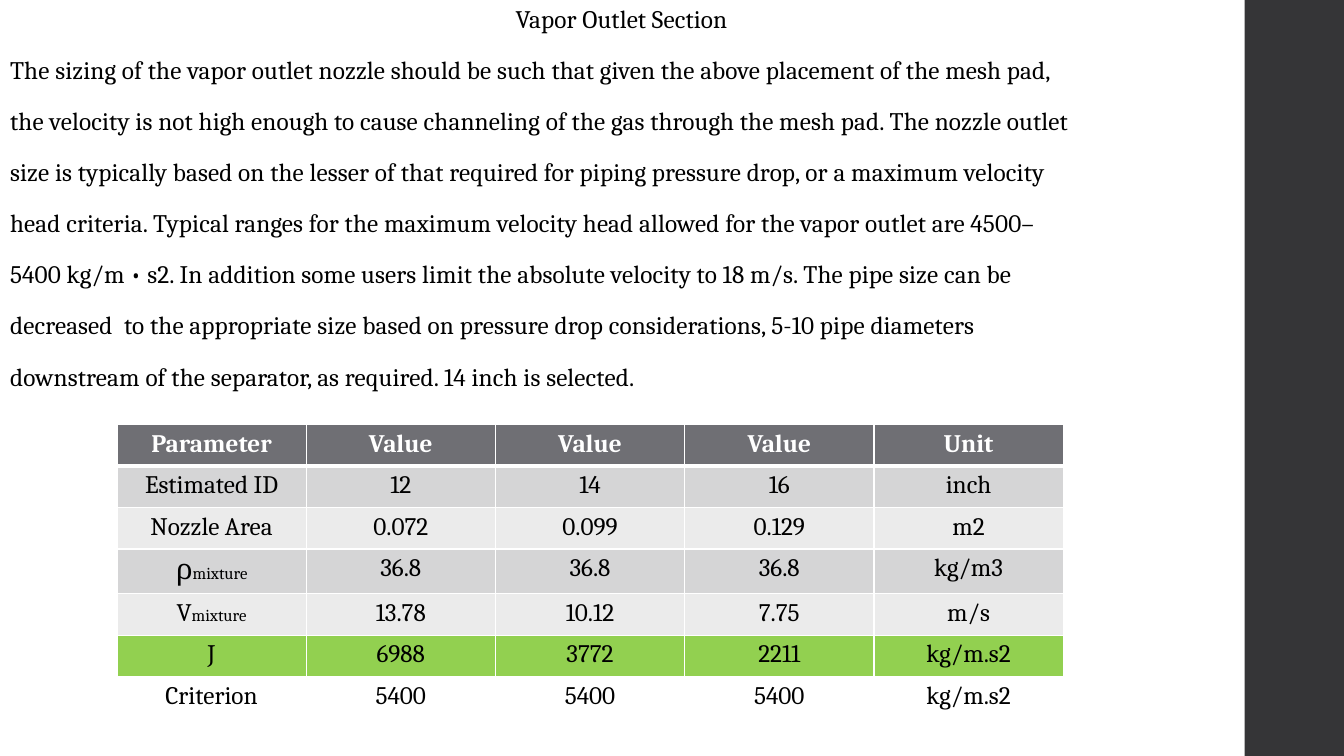
import pptx
import pptx.util
import pptx.dml.color
import pptx.enum.shapes
import pptx.enum.text
import pptx.oxml
import pptx.oxml.ns
import lxml.etree

Pt = pptx.util.Pt
ALIGN = pptx.enum.text.PP_ALIGN
COLORS = {
    "text": "000000", "white": "FFFFFF", "side": "353537", "header": "6F6F74",
    "dark": "D5D5D6", "light": "EBEBEB", "selected": "92D050",
}


def rgb(name):
    return pptx.dml.color.RGBColor.from_string(COLORS[name])


def format_run(run, size, color="text", bold=False):
    run.font.name = "Cambria"
    run.font.size = Pt(size)
    run.font.bold = bold
    run.font.color.rgb = rgb(color)


deck = pptx.Presentation()
deck.slide_width = Pt(960)
deck.slide_height = Pt(540)
slide = deck.slides.add_slide(deck.slide_layouts[1])
title = slide.shapes.title
title.element.getparent().remove(title.element)

side_band = slide.shapes.add_shape(
    pptx.enum.shapes.MSO_SHAPE.RECTANGLE, Pt(889), Pt(0), Pt(71), Pt(540))
side_band.shadow.inherit = False
side_band.fill.solid()
side_band.fill.fore_color.rgb = rgb("side")
side_band.line.fill.background()

lines = [
    "Vapor Outlet Section",
    "The sizing of the vapor outlet nozzle should be such that given the above placement of the mesh pad,",
    "the velocity is not high enough to cause channeling of the gas through the mesh pad. The nozzle outlet",
    "size is typically based on the lesser of that required for piping pressure drop, or a maximum velocity",
    "head criteria. Typical ranges for the maximum velocity head allowed for the vapor outlet are 4500–",
    "5400 kg/m • s2. In addition some users limit the absolute velocity to 18 m/s. The pipe size can be",
    "decreased  to the appropriate size based on pressure drop considerations, 5-10 pipe diameters",
    "downstream of the separator, as required. 14 inch is selected.",
]
body = slide.placeholders[1]
body.left, body.top, body.width, body.height = Pt(0), Pt(0), Pt(888), Pt(540)
sizing_text = body.text_frame
sizing_text.auto_size = pptx.enum.text.MSO_AUTO_SIZE.NONE
sizing_text.vertical_anchor = pptx.enum.text.MSO_ANCHOR.TOP
sizing_text.text = "\n".join(lines)
for number, paragraph in enumerate(sizing_text.paragraphs):
    paragraph.alignment = ALIGN.LEFT if number else ALIGN.CENTER
    paragraph.line_spacing = 0.95
    paragraph.space_before = Pt(14)
    paragraph.space_after = Pt(2)
    properties = paragraph._p.get_or_add_pPr()
    properties.set("marL", "0")
    properties.set("indent", "0")
    lxml.etree.SubElement(properties, pptx.oxml.ns.qn("a:buNone"))
    format_run(paragraph.runs[0], 18)
    paragraph.runs[0].font._element.set("spc", "10")

rows = [
    ("header", ["Parameter", "Value", "Value", "Value", "Unit"]),
    ("dark", ["Estimated ID", "12", "14", "16", "inch"]),
    ("light", ["Nozzle Area", "0.072", "0.099", "0.129", "m2"]),
    ("dark", [[("ρ", 20), ("mixture", 12)], "36.8", "36.8", "36.8", "kg/m3"]),
    ("light", [[("V", 18), ("mixture", 12)], "13.78", "10.12", "7.75", "m/s"]),
    ("selected", ["J", "6988", "3772", "2211", "kg/m.s2"]),
    ("white", ["Criterion", "5400", "5400", "5400", "kg/m.s2"]),
]
nozzles = slide.shapes.add_table(
    len(rows), 5, Pt(83.5), Pt(303.3), Pt(676), Pt(209.6)).table
for column in nozzles.columns:
    column.width = Pt(135.2)
for row_number, (fill, entries) in enumerate(rows):
    nozzles.rows[row_number].height = Pt(32 if row_number == 3 else 29.6)
    is_header = row_number == 0
    for column_number, entry in enumerate(entries):
        cell = nozzles.cell(row_number, column_number)
        paragraph = cell.text_frame.paragraphs[0]
        paragraph.alignment = ALIGN.CENTER
        for wording, size in [(entry, 18)] if isinstance(entry, str) else entry:
            run = paragraph.add_run()
            run.text = wording
            format_run(run, size, "white" if is_header else "text", is_header)
        cell_properties = cell._tc.get_or_add_tcPr()
        for side in "LRTB":
            thick = (row_number, side) in [(0, "B"), (1, "T")]
            cell_properties.append(pptx.oxml.parse_xml(
                f'<a:ln{side} {pptx.oxml.ns.nsdecls("a")} w="{Pt(3 if thick else 1)}">'
                f'<a:solidFill><a:srgbClr val="{COLORS["white"]}"/></a:solidFill></a:ln{side}>'))
        cell.fill.solid()
        cell.fill.fore_color.rgb = rgb(fill)

deck.save("out.pptx")
